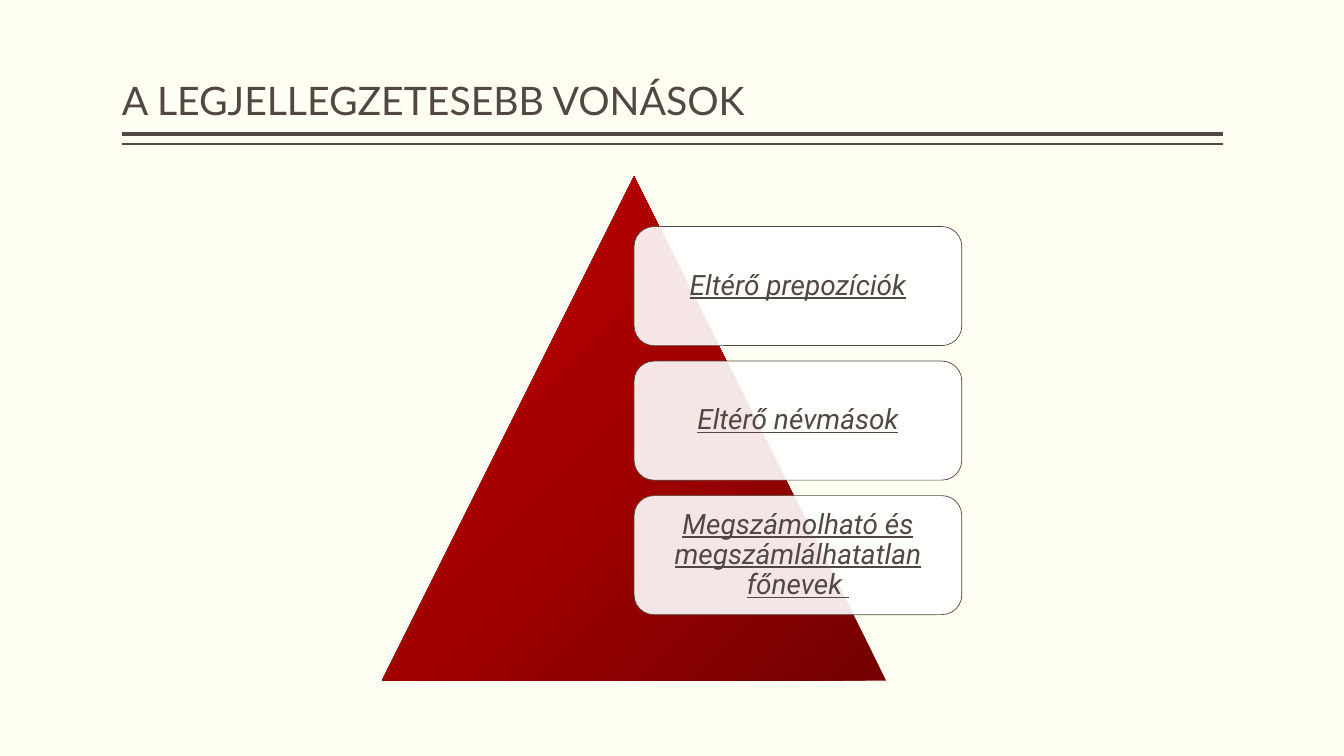
import copy
from typing import NamedTuple

import lxml.etree
import pptx
import pptx.dml.color
import pptx.enum.shapes
import pptx.enum.text
import pptx.oxml.ns
import pptx.util
from pptx.util import Cm, Pt

INK = "514843"
MARGIN, RIGHT = 3.07, 30.81
BOX_LEFT, BOX_TOP, BOX_W, BOX_H, BOX_PITCH = 15.98, 5.71, 8.26, 3.0, 3.39
FEATURES = [
    "Eltérő prepozíciók",
    "Eltérő névmások",
    "Megszámolható és megszámlálhatatlan főnevek ",
]


class Rule(NamedTuple):
    y: float
    weight: float


class Stop(NamedTuple):
    position: float
    color: str


RULES = [Rule(3.38, 3), Rule(3.63, 1)]
PYRAMID_STOPS = [Stop(0, "720000"), Stop(0.5, "A20000"), Stop(1, "C00000")]


def rgb(color: str) -> pptx.dml.color.RGBColor:
    return pptx.dml.color.RGBColor.from_string(color)


def add_title(s, text: str) -> None:
    sp = s.shapes.title
    sp.left, sp.top = Cm(MARGIN), Cm(0.2)
    sp.width, sp.height = Cm(RIGHT - MARGIN), Cm(3.05)
    tf = sp.text_frame
    tf.text = text
    tf.word_wrap = True
    tf.auto_size = pptx.enum.text.MSO_AUTO_SIZE.NONE
    tf.vertical_anchor = pptx.enum.text.MSO_ANCHOR.BOTTOM
    tf.margin_left = tf.margin_right = 0
    p = tf.paragraphs[0]
    p.alignment = pptx.enum.text.PP_ALIGN.LEFT
    p.line_spacing = 0.9
    p.font.size, p.font.name = Pt(28), "Lato"
    p.font.color.rgb = rgb(INK)


def add_rule(s, rule: Rule) -> None:
    line = s.shapes.add_connector(
        pptx.enum.shapes.MSO_CONNECTOR.STRAIGHT,
        Cm(MARGIN), Cm(rule.y), Cm(RIGHT), Cm(rule.y))
    line.line.color.rgb = rgb(INK)
    line.line.width = Pt(rule.weight)
    lxml.etree.SubElement(line._element.spPr, pptx.oxml.ns.qn("a:effectLst"))


def add_pyramid(s, stops: list[Stop]) -> None:
    sp = s.shapes.add_shape(
        pptx.enum.shapes.MSO_SHAPE.ISOSCELES_TRIANGLE,
        Cm(9.63), Cm(4.45), Cm(12.7), Cm(12.7))
    sp.shadow.inherit = False
    sp.line.fill.background()
    sp.fill.gradient()
    sp.fill.gradient_angle = 135
    # A new gradient has two stops; the third is cloned from the first.
    gs_list = sp._element.spPr.find(".//" + pptx.oxml.ns.qn("a:gsLst"))
    gs_list.append(copy.deepcopy(gs_list[0]))
    for target, stop in zip(sp.fill.gradient_stops, stops):
        target.position = stop.position
        target.color.rgb = rgb(stop.color)


def add_feature(s, top: float, text: str) -> None:
    sp = s.shapes.add_shape(
        pptx.enum.shapes.MSO_SHAPE.ROUNDED_RECTANGLE,
        Cm(BOX_LEFT), Cm(top), Cm(BOX_W), Cm(BOX_H))
    sp.shadow.inherit = False
    sp.fill.solid()
    sp.fill.fore_color.rgb = rgb("FFFFFF")
    color = sp._element.spPr.find(".//" + pptx.oxml.ns.qn("a:srgbClr"))
    lxml.etree.SubElement(color, pptx.oxml.ns.qn("a:alpha"), val="90000")
    sp.line.color.rgb = rgb(INK)
    sp.line.width = Pt(0.5)
    tf = sp.text_frame
    tf.text = text
    tf.word_wrap = True
    tf.vertical_anchor = pptx.enum.text.MSO_ANCHOR.MIDDLE
    tf.margin_left = tf.margin_right = tf.margin_top = tf.margin_bottom = Cm(0.2)
    p = tf.paragraphs[0]
    p.alignment = pptx.enum.text.PP_ALIGN.CENTER
    p.line_spacing = 0.9
    p.font.size, p.font.name = Pt(20), "Roboto"
    p.font.italic = p.font.underline = True
    p.font.color.rgb = rgb(INK)


def main() -> None:
    prs = pptx.Presentation()
    prs.slide_width, prs.slide_height = Cm(33.87), Cm(19.05)
    s = prs.slides.add_slide(prs.slide_layouts.get_by_name("Title Only"))
    s.background.fill.solid()
    s.background.fill.fore_color.rgb = rgb("FFFFF3")
    add_title(s, "A LEGJELLEGZETESEBB VONÁSOK")
    for rule in RULES:
        add_rule(s, rule)
    add_pyramid(s, PYRAMID_STOPS)
    for i, text in enumerate(FEATURES):
        add_feature(s, BOX_TOP + i * BOX_PITCH, text)
    prs.save("out.pptx")


if __name__ == "__main__":
    main()
